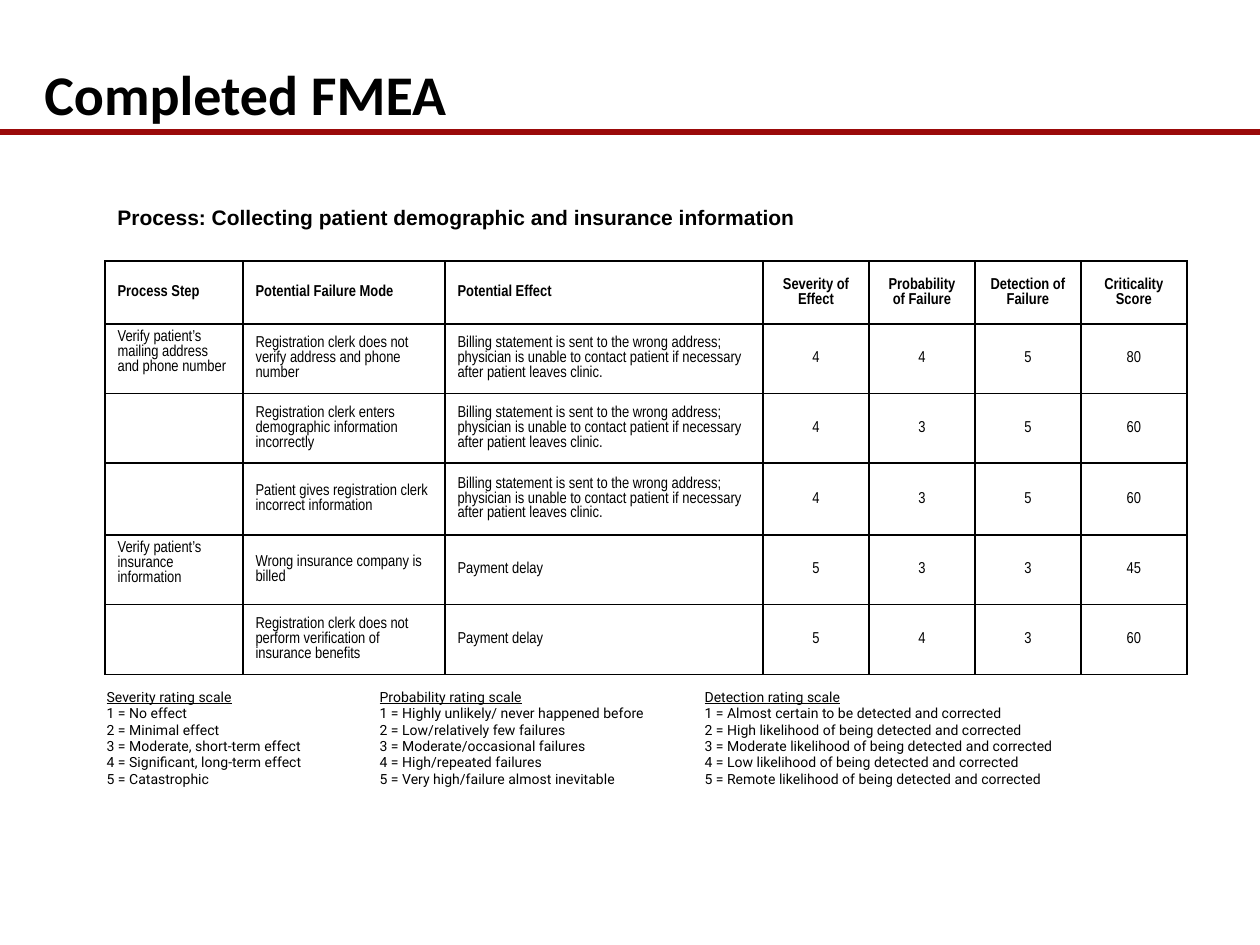
"""Build the completed FMEA slide with its score table and rating scales."""
from dataclasses import dataclass

from lxml import etree
from pptx import Presentation
from pptx import util as u
from pptx.dml.color import RGBColor
from pptx.enum import shapes, text
from pptx.oxml.ns import qn

BLACK = RGBColor(0, 0, 0)
RED = RGBColor(0x9B, 0x0A, 0x0A)
PLAIN = "{2D5ABB26-0587-4C30-8999-92F81FD0307C}"
LEFT, MID = text.PP_ALIGN.LEFT, text.PP_ALIGN.CENTER
TOP, CENTRE = text.MSO_ANCHOR.TOP, text.MSO_ANCHOR.MIDDLE
HANG = 54


@dataclass(frozen=True)
class Font:
    name: str
    size: int
    bold: bool = False
    under: bool = False


@dataclass(frozen=True)
class Label:
    words: str
    box: tuple[int, int, int, int]
    font: Font
    anchor: text.MSO_ANCHOR
    inset: int


@dataclass(frozen=True)
class Scale:
    name: str
    grades: tuple[str, ...]
    hang: int


HEAD = Font("Arial Narrow", 9, bold=True)
BODY = Font("Arial Narrow", 9)
NOTE = Font("Roboto", 8)
TITLE = Font("Roboto", 8, under=True)

LABELS = (
    Label("Completed FMEA", (32, 50, 1197, 126), Font("Calibri", 32, True), TOP, 10),
    Label("Process: Collecting patient demographic and insurance information",
          (105, 198, 1018, 38), Font("Arial", 12, True), CENTRE, 6),
)

WRONG = ("Billing statement is sent to the wrong address; physician is unable to "
         "contact patient if necessary after patient leaves clinic.")
LATE = "Payment delay"
HEADS = ("Process Step", "Potential Failure Mode", "Potential Effect", "Severity of Effect",
         "Probability of Failure", "Detection of Failure", "Criticality\nScore")
MODES = (
    ("Verify patient’s mailing address and phone number",
     "Registration clerk does not verify address and phone number", WRONG, 4, 4, 5, 80),
    ("", "Registration clerk enters demographic information incorrectly",
     WRONG, 4, 3, 5, 60),
    ("", "Patient gives registration clerk incorrect information", WRONG, 4, 3, 5, 60),
    ("Verify patient’s insurance information",
     "Wrong insurance company is billed", LATE, 5, 3, 3, 45),
    ("", "Registration clerk does not perform verification of insurance benefits",
     LATE, 5, 4, 3, 60),
)
SCALES = (
    Scale("Severity rating scale",
          ("No effect", "Minimal effect", "Moderate, short-term effect",
           "Significant, long-term effect", "Catastrophic"), HANG),
    Scale("Probability rating scale",
          ("Highly unlikely/ never happened before", "Low/relatively few failures",
           "Moderate/occasional failures", "High/repeated failures",
           "Very high/failure almost inevitable"), HANG),
    Scale("Detection rating scale",
          tuple(f"{odds} of being detected and corrected" if odds != "Almost certain"
                else "Almost certain to be detected and corrected"
                for odds in ("Almost certain", "High likelihood", "Moderate likelihood",
                             "Low likelihood", "Remote likelihood")), 24),
)


def px(count: int) -> u.Emu:
    """Turn pixels into EMU."""
    return u.Emu(round(count * 914400 / 126))


def write(para, words: str, font: Font, align=LEFT, hang: int = 0) -> None:
    """Write text into a paragraph, one run per line."""
    para.alignment = align
    if hang:
        props = para._p.get_or_add_pPr()
        props.set("marL", str(px(hang)))
        props.set("indent", str(-px(hang)))
    for index, line in enumerate(words.split("\n")):
        if index:
            para.add_line_break()
        run = para.add_run()
        run.text = line
        run.font.name, run.font.size = font.name, u.Pt(font.size)
        run.font.bold, run.font.underline = font.bold, font.under
        run.font.color.rgb = BLACK


def label(slide, item: Label) -> None:
    """Add a text box."""
    frame = slide.shapes.add_textbox(*map(px, item.box)).text_frame
    frame.word_wrap = True
    frame.vertical_anchor = item.anchor
    frame.margin_top = px(item.inset)
    write(frame.paragraphs[0], item.words, item.font)


def rule(slide, top: int, width: int) -> None:
    """Add the red rule below the title."""
    line = slide.shapes.add_connector(
        shapes.MSO_CONNECTOR.STRAIGHT, px(0), px(top), px(width), px(top))
    line.line.color.rgb = RED
    line.line.width = u.Pt(3.75)
    etree.SubElement(line._element.spPr, qn("a:effectLst"))


def grid(slide, left: int, top: int, cols: tuple[int, ...], rows: tuple[int, ...]):
    """Add a table without style or fill."""
    table = slide.shapes.add_table(len(rows), len(cols), px(left), px(top),
                                   px(sum(cols)), px(sum(rows))).table
    table._tbl.tblPr.find(qn("a:tableStyleId")).text = PLAIN
    table.first_row = table.horz_banding = False
    for col, width in zip(table.columns, cols):
        col.width = px(width)
    for row, height in zip(table.rows, rows):
        row.height = px(height)
    for cell in table.iter_cells():
        cell.fill.background()
    return table


def border(cell) -> None:
    """Draw a thin black line on each side of a cell."""
    props = cell._tc.get_or_add_tcPr()
    for index, side in enumerate(("lnL", "lnR", "lnT", "lnB")):
        line = etree.Element(qn(f"a:{side}"), w=str(u.Pt(1)))
        fill = etree.SubElement(line, qn("a:solidFill"))
        etree.SubElement(fill, qn("a:srgbClr"), val=str(BLACK))
        props.insert(index, line)


def scores(slide) -> None:
    """Add the table of failure modes."""
    table = grid(slide, 105, 261, (138, 202, 318) + (106,) * 4, (63, 69, 69, 72, 69, 70))
    for row, entry in enumerate((HEADS, *MODES)):
        for col, value in enumerate(entry):
            cell = table.cell(row, col)
            border(cell)
            if value == "":
                continue
            cell.vertical_anchor = TOP if row and col == 0 else CENTRE
            single = (col < 3) if row == 0 else (col > 2 or value == LATE)
            write(cell.text_frame.paragraphs[0], str(value), BODY if row else HEAD,
                  MID if col > 2 else LEFT, HANG if single else 0)


def scales(slide) -> None:
    """Add the three rating scales."""
    table = grid(slide, 94, 683, (273, 325, 494), (147,))
    for col, scale in enumerate(SCALES):
        frame = table.cell(0, col).text_frame
        write(frame.paragraphs[0], scale.name, TITLE, hang=scale.hang)
        for grade, words in enumerate(scale.grades, 1):
            write(frame.add_paragraph(), f"{grade} = {words}", NOTE, hang=scale.hang)


def main() -> None:
    """Build and save the slide."""
    deck = Presentation()
    deck.slide_width, deck.slide_height = px(1260), px(945)
    slide = deck.slides.add_slide(deck.slide_layouts[6])
    rule(slide, 132, 1260)
    for item in LABELS:
        label(slide, item)
    scores(slide)
    scales(slide)
    deck.save("out.pptx")


if __name__ == "__main__":
    main()
